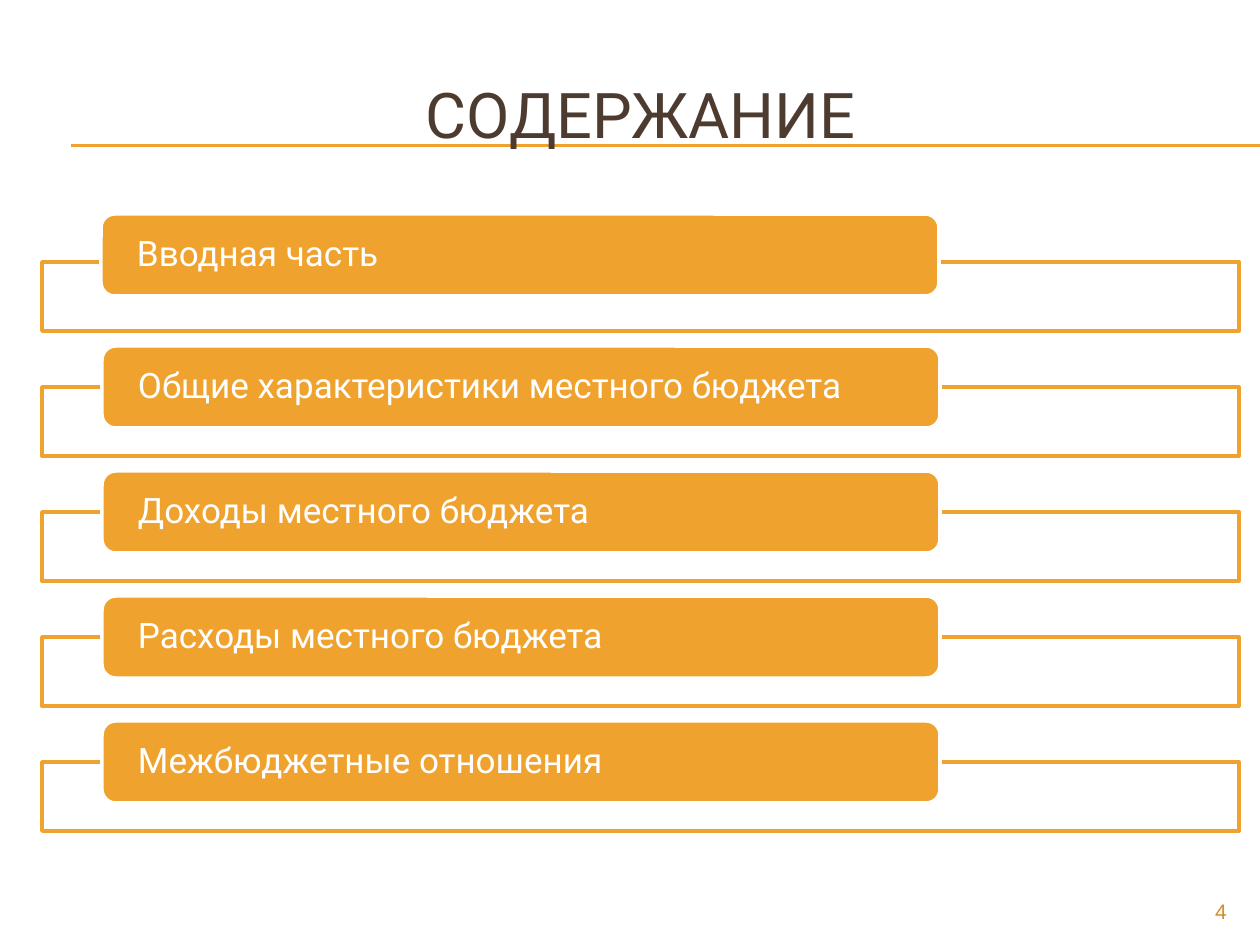
from dataclasses import dataclass

from lxml.etree import SubElement
from pptx import Presentation
from pptx.dml.color import RGBColor
from pptx.enum.shapes import MSO_CONNECTOR, MSO_SHAPE as Shape
from pptx.enum.text import MSO_ANCHOR as Anchor, PP_ALIGN as Align
from pptx.oxml.ns import qn
from pptx.util import Emu, Pt

PX = 914400 / 126
AMBER, WHITE, BROWN, OCHRE = "F0A22E", "FFFFFF", "4E3B30", "D38E27"
ROW_STEP, FRAME_TOP = 125, 262


@dataclass
class Section:
    title: str
    bar_left: int = 102
    bar_rise: int = 41


SECTIONS = [
    Section("Вводная часть", bar_left=101, bar_rise=48),
    Section("Общие характеристики местного бюджета"),
    Section("Доходы местного бюджета"),
    Section("Расходы местного бюджета"),
    Section("Межбюджетные отношения"),
]


def px(length: int) -> Emu:
    """Turn pixels into EMU."""
    return Emu(round(length * PX))


def color(value: str) -> RGBColor:
    """Turn a hex string into a colour."""
    return RGBColor.from_string(value)


def write(box, text: str, size: int, font: str, ink: str, align: Align) -> None:
    """Put one formatted paragraph into a box."""
    frame = box.text_frame
    frame.word_wrap = True
    frame.text = text
    para = frame.paragraphs[0]
    para.alignment = align
    for span in para.runs:
        span.font.size = Pt(size)
        span.font.name = font
        span.font.color.rgb = color(ink)


def add_panel(page, kind: Shape, left: int, top: int, width: int, height: int,
              fill: str, line: str):
    """Add a filled and outlined shape."""
    panel = page.shapes.add_shape(kind, px(left), px(top), px(width), px(height))
    panel.shadow.inherit = False
    panel.fill.solid()
    panel.fill.fore_color.rgb = color(fill)
    panel.line.color.rgb = color(line)
    panel.line.width = Pt(2)
    return panel


def add_rule(page, top: int) -> None:
    """Add a thin line behind the title."""
    rule = page.shapes.add_connector(MSO_CONNECTOR.STRAIGHT, px(71), px(top), px(1260), px(top))
    rule.line.color.rgb = color(AMBER)
    rule.line.width = Pt(0.75)
    SubElement(rule.element.spPr, qn("a:effectLst"))
    page.shapes.title.element.addprevious(rule.element)


def add_title(page, text: str) -> None:
    """Place and format the title."""
    title = page.shapes.title
    title.left, title.top, title.width, title.height = px(42), px(55), px(1197), px(116)
    write(title, text, 36, "Roboto", BROWN, Align.CENTER)
    title.text_frame.vertical_anchor = Anchor.MIDDLE


def add_section(page, section: Section, top: int) -> None:
    """Add a frame with its titled bar."""
    frame = add_panel(page, Shape.RECTANGLE, 42, top, 1197, 69, WHITE, AMBER)
    tint = frame.element.spPr.find(qn("a:solidFill"))[0]
    SubElement(tint, qn("a:alpha"), val="90000")
    bar = add_panel(page, Shape.ROUNDED_RECTANGLE, section.bar_left, top - section.bar_rise,
                    838, 82, AMBER, WHITE)
    write(bar, section.title, 20, "Roboto", WHITE, Align.LEFT)
    text = bar.text_frame
    text.vertical_anchor = Anchor.MIDDLE
    text.margin_left = text.margin_right = px(32)
    text.margin_top = text.margin_bottom = 0
    text.paragraphs[0].line_spacing = 0.9


def main() -> None:
    """Build and save the contents slide."""
    deck = Presentation()
    deck.slide_width, deck.slide_height = px(1260), px(945)
    page = deck.slides.add_slide(deck.slide_layouts[5])
    add_title(page, "СОДЕРЖАНИЕ")
    for top in (145, 146):
        add_rule(page, top)
    for row, section in enumerate(SECTIONS):
        add_section(page, section, FRAME_TOP + row * ROW_STEP)
    number = page.shapes.add_textbox(px(1134), px(892), px(105), px(34))
    write(number, "4", 12, "Arial", OCHRE, Align.RIGHT)
    deck.save("out.pptx")


if __name__ == "__main__":
    main()
